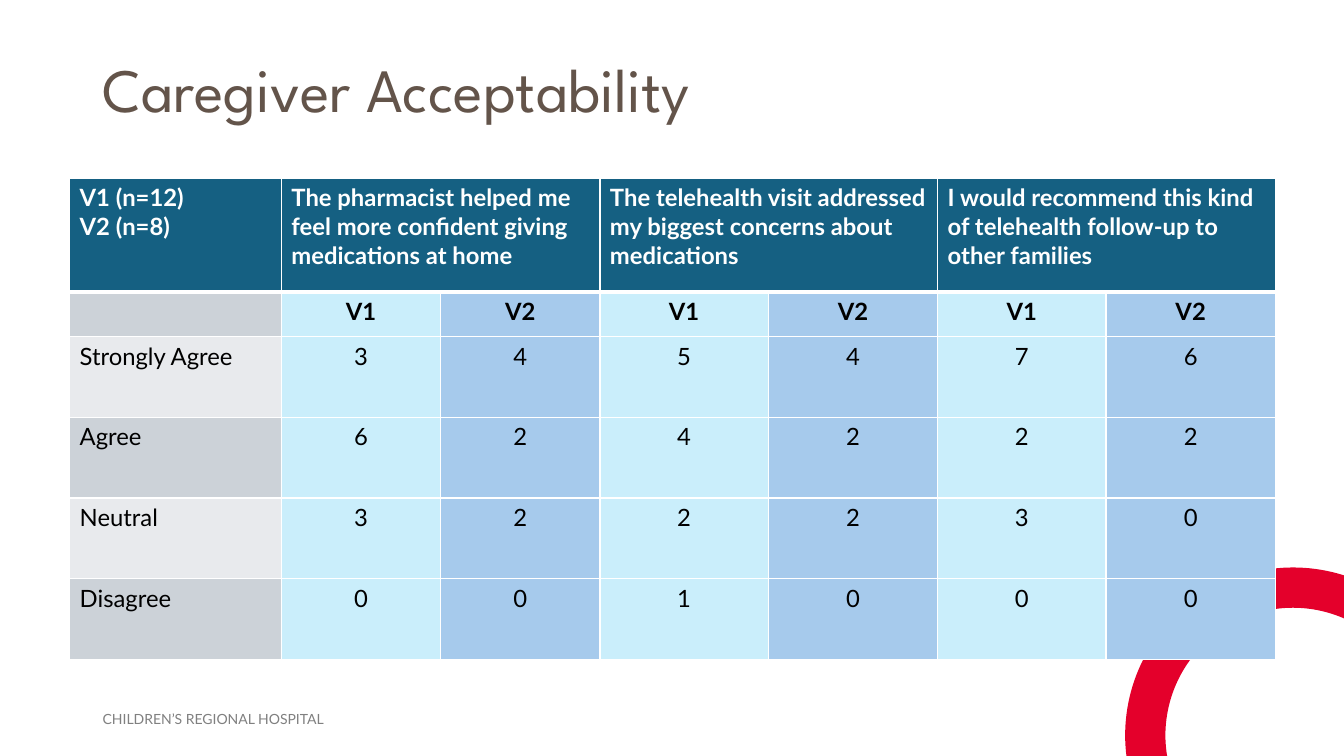
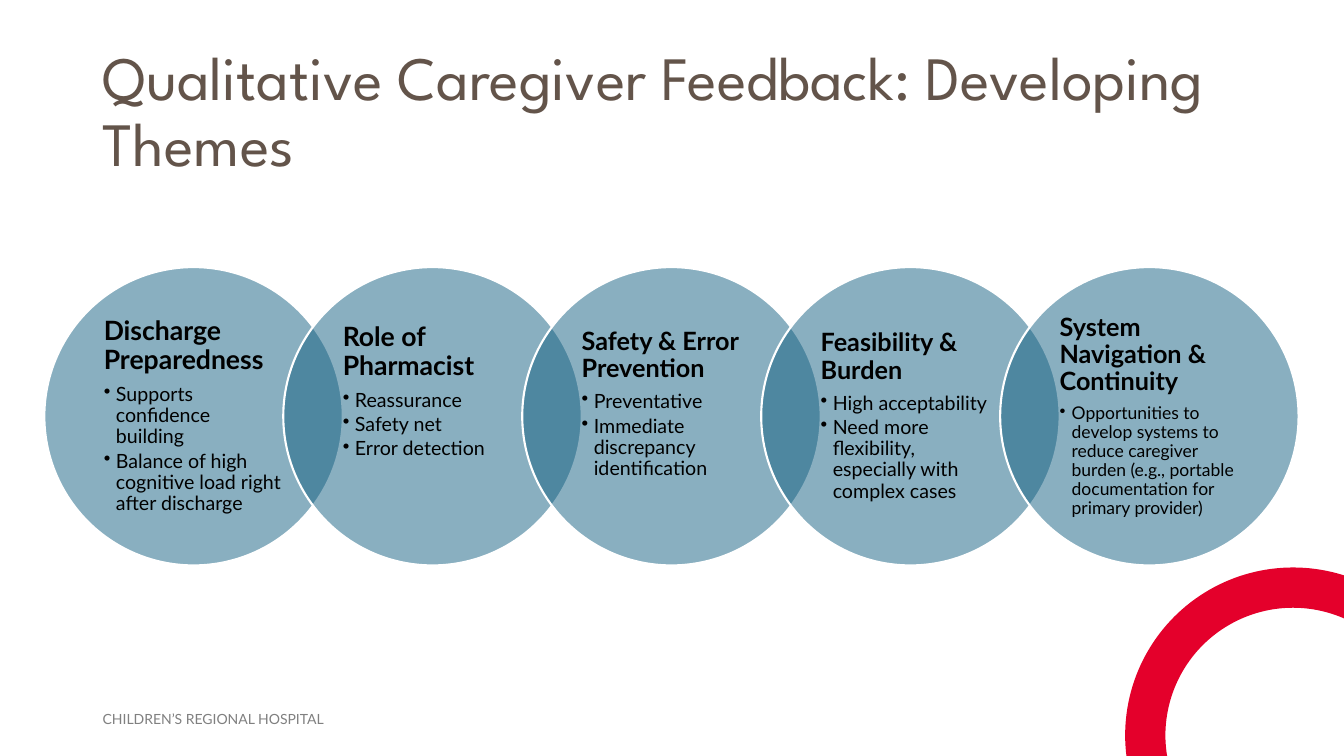
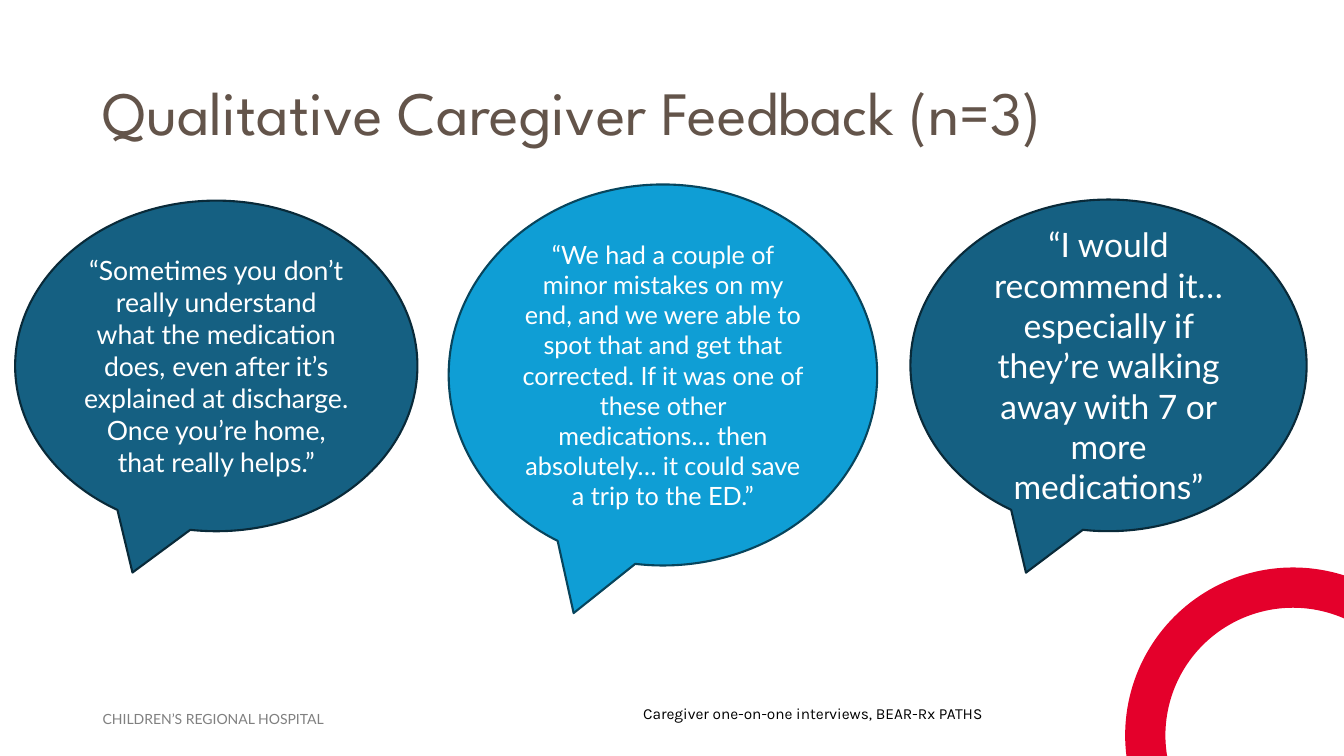
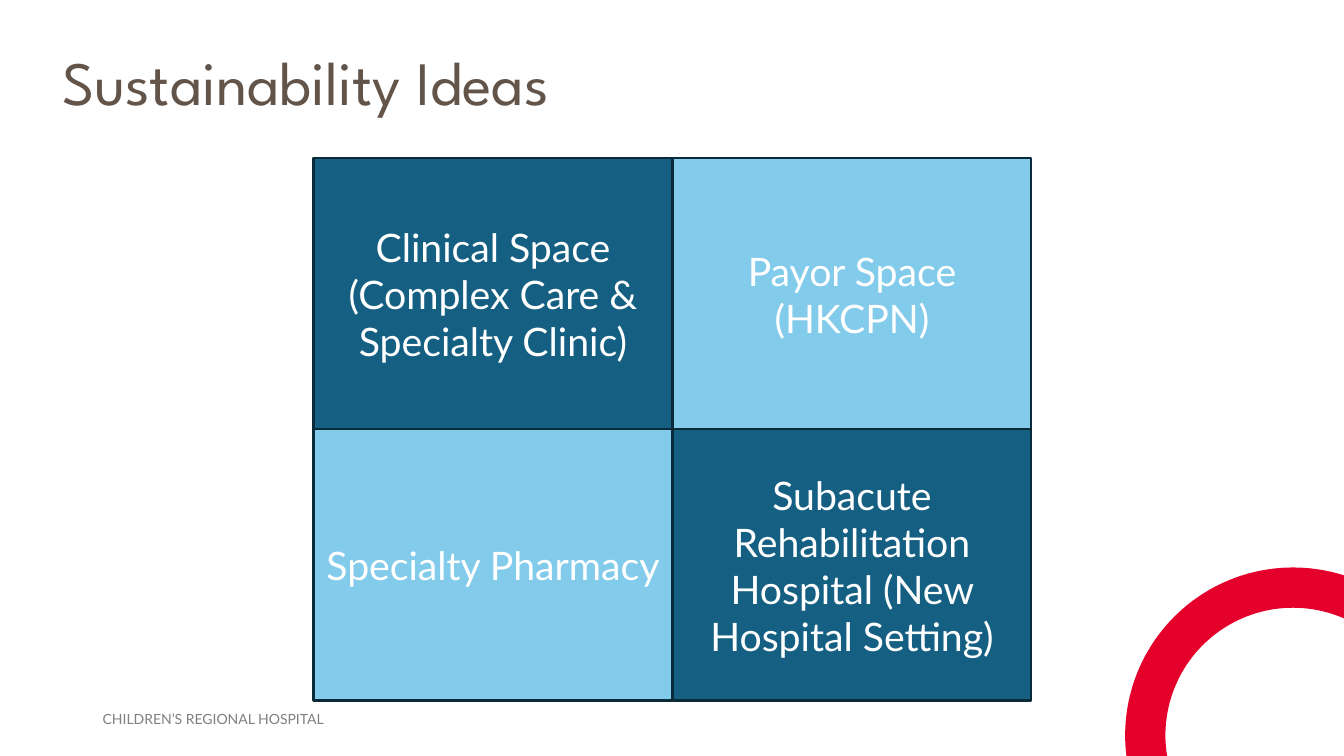
from itertools import product
from lxml.etree import SubElement
from pptx import Presentation
from pptx.dml.color import RGBColor
from pptx.enum.shapes import MSO_SHAPE
from pptx.enum.text import MSO_ANCHOR, PP_ALIGN
from pptx.oxml.ns import qn
from pptx.util import Pt

PX = 9144
WHITE, BLACK = "FFFFFF", "000000"
RED, BROWN, GREY = "E4002B", "63544A", "808080"
TEAL, TEAL_EDGE = "156082", "092A39"
BLUE, BLUE_EDGE, SKY = "0F9ED5", "07455D", "83CBEB"
VISIT_FILLS = ["CAEEFB", "A6CAEC"]
LABEL_FILLS = ["CCD2D8", "E8EAED"]

CENTRED = {"alignment": PP_ALIGN.CENTER}
TIGHT = {"line_spacing": 0.9}
MIDDLE = {"word_wrap": True, "vertical_anchor": MSO_ANCHOR.MIDDLE}


def px(*lengths):
    return [length * PX for length in lengths]


def colour(hex_code):
    return RGBColor.from_string(hex_code)


def apply(target, values):
    for name, value in values.items():
        setattr(target, name, value)


def face(size, hex_code, name="Lato", bold=False):
    return {"size": Pt(size), "name": name, "bold": bold, "color": hex_code}


def add_bullet(paragraph, indent):
    properties = paragraph._p.get_or_add_pPr()
    properties.set("marL", str(indent))
    properties.set("indent", str(-indent))
    SubElement(properties, qn("a:buChar")).set("char", "•")


def write(frame, lines, font, layout=None, bulleted=False, more=False):
    for number, line in enumerate(lines):
        paragraph = frame.add_paragraph() if number or more else frame.paragraphs[0]
        if bulleted:
            add_bullet(paragraph, 12 * PX)
        apply(paragraph, layout or {})
        run = paragraph.add_run()
        run.text = line
        apply(run.font, {key: value for key, value in font.items() if key != "color"})
        run.font.color.rgb = colour(font["color"])


def add_text(slide, box, lines, font, layout=None, frame_values=None):
    frame = slide.shapes.add_textbox(*px(*box)).text_frame
    apply(frame, {"word_wrap": True, **(frame_values or {})})
    write(frame, lines, font, layout)
    return frame


def add_figure(slide, kind, box, fill, edge=None):
    figure = slide.shapes.add_shape(kind, *px(*box))
    figure.shadow.inherit = False
    figure.fill.solid()
    figure.fill.fore_color.rgb = colour(fill)
    if edge:
        figure.line.color.rgb = colour(edge)
        figure.line.width = Pt(1.5)
    else:
        figure.line.fill.background()
    return figure


def add_panel(slide, kind, box, fill, edge, lines, size):
    panel = add_figure(slide, kind, box, fill, edge)
    apply(panel.text_frame, MIDDLE)
    write(panel.text_frame, lines, face(size, WHITE), CENTRED)


def start_slide(deck, title, left, top):
    slide = deck.slides.add_slide(deck.slide_layouts[6])
    ring = add_figure(slide, MSO_SHAPE.DONUT, (1116, 563, 333, 333), RED)
    ring.adjustments[0] = 0.12
    add_text(slide, (92, 700, 420, 27), ["CHILDREN’S REGIONAL HOSPITAL"], face(10, GREY))
    add_text(slide, (left, top, 1150, 145), [title],
             face(44, BROWN, "League Spartan"), TIGHT, MIDDLE)
    return slide


def fill_cell(cell, fill, top=1, bottom=1):
    properties = cell._tc.get_or_add_tcPr()
    for side, width in {"L": 1, "R": 1, "T": top, "B": bottom}.items():
        border = SubElement(properties, qn(f"a:ln{side}"), w=str(Pt(width)))
        paint = SubElement(border, qn("a:solidFill"))
        SubElement(paint, qn("a:srgbClr")).set("val", WHITE)
    cell.fill.solid()
    cell.fill.fore_color.rgb = colour(fill)


def add_survey(slide, box, widths, heights, groups, statements, answers):
    rows = [("", ["V1", "V2"] * len(statements)), *answers]
    survey = slide.shapes.add_table(len(heights), len(widths), *px(*box)).table
    for column, width in zip(survey.columns, px(*widths)):
        column.width = width
    for row, height in zip(survey.rows, px(*heights)):
        row.height = height

    for column in range(len(widths)):
        fill_cell(survey.cell(0, column), TEAL, bottom=3)
    heading = face(17, WHITE, bold=True)
    write(survey.cell(0, 0).text_frame, groups, heading)
    for number, statement in enumerate(statements):
        column = 1 + 2 * number
        survey.cell(0, column).merge(survey.cell(0, column + 1))
        write(survey.cell(0, column).text_frame, [statement], heading)

    for number, (label, values) in enumerate(rows):
        top = 1 if number else 3
        font = face(17, BLACK, bold=number == 0)
        label_cell = survey.cell(number + 1, 0)
        fill_cell(label_cell, LABEL_FILLS[number % 2], top)
        if label:
            write(label_cell.text_frame, [label], font)
        for column, value in enumerate(values):
            cell = survey.cell(number + 1, column + 1)
            fill_cell(cell, VISIT_FILLS[column % 2], top)
            write(cell.text_frame, [str(value)], font, CENTRED)


def add_theme(slide, left, top, heading, heading_size, points, point_size, lift):
    circle = add_figure(slide, MSO_SHAPE.OVAL, (left, top, 296, 296), TEAL, WHITE)
    tint = circle.fill._xPr.find(qn("a:solidFill"))[0]
    SubElement(tint, qn("a:alpha")).set("val", "50000")
    margins = dict(zip(("margin_left", "margin_top", "margin_right", "margin_bottom"),
                       px(16, 3, 16, 3 + lift)))
    frame = add_text(slide, (left + 43, top + 43, 210, 210), [heading],
                     face(heading_size, BLACK, bold=True),
                     {**TIGHT, "space_after": Pt(0.35 * heading_size)},
                     {**MIDDLE, **margins})
    write(frame, points, face(point_size, BLACK),
          {**TIGHT, "space_after": Pt(0.15 * point_size)}, bulleted=True, more=True)


def add_quadrants(slide, box, ideas):
    left, top, width, height = box
    for (row, column), lines in zip(product(range(2), repeat=2), ideas):
        fill = SKY if (row + column) % 2 else TEAL
        add_panel(slide, MSO_SHAPE.RECTANGLE,
                  (left + column * width, top + row * height, width, height),
                  fill, TEAL_EDGE, lines, 28)


def build_acceptability(deck):
    slide = start_slide(deck, "Caregiver Acceptability", 92, 19)
    add_survey(
        slide, (69, 177, 1196, 477),
        [210, 158, 158, 167, 168, 167, 168], [113, 44, 80, 80, 80, 80],
        ["V1 (n=12)", "V2 (n=8)"],
        ["The pharmacist helped me feel more confident giving medications at home",
         "The telehealth visit addressed my biggest concerns about medications",
         "I would recommend this kind of telehealth follow-up to other families"],
        [("Strongly Agree", [3, 4, 5, 4, 7, 6]),
         ("Agree", [6, 2, 4, 2, 2, 2]),
         ("Neutral", [3, 2, 2, 2, 3, 0]),
         ("Disagree", [0, 0, 1, 0, 0, 0])])


def build_themes(deck):
    slide = start_slide(deck, "Qualitative Caregiver Feedback: Developing Themes", 92, 40)
    themes = [
        ("Discharge Preparedness", 19,
         ["Supports confidence building",
          "Balance of high cognitive load right after discharge"], 14, 0),
        ("Role of Pharmacist", 19,
         ["Reassurance", "Safety net", "Error detection"], 14, 48),
        ("Safety & Error Prevention", 18,
         ["Preventative", "Immediate discrepancy identification"], 14, 24),
        ("Feasibility & Burden", 18,
         ["High acceptability",
          "Need more flexibility, especially with complex cases"], 14, 0),
        ("System Navigation & Continuity", 18,
         ["Opportunities to develop systems to reduce caregiver burden "
          "(e.g., portable documentation for primary provider)"], 12.5, 0),
    ]
    for number, theme in enumerate(themes):
        add_theme(slide, 44 + 237 * number, 265, *theme)


def build_quotes(deck):
    slide = start_slide(deck, "Qualitative Caregiver Feedback (n=3)", 92, 42)
    quotes = [
        ((15, 199, 399, 328), TEAL, TEAL_EDGE,
         ["“Sometimes you don’t really understand what the medication does, even after "
          "it’s explained at discharge. Once you’re home, that really helps.”"], 19),
        ((445, 183, 425, 378), BLUE, BLUE_EDGE,
         ["“We had a couple of minor mistakes on my end, and we were able to spot that "
          "and get that corrected. If it was one of these other medications… then "
          "absolutely… it could save a trip to the ED.”"], 18),
        ((903, 198, 393, 329), TEAL, TEAL_EDGE,
         ["“I would recommend it… especially if they’re walking away with 7 or more "
          "medications”"], 24),
    ]
    for quote in quotes:
        add_panel(slide, MSO_SHAPE.OVAL_CALLOUT, *quote)
    add_text(slide, (628, 694, 424, 29),
             ["Caregiver one-on-one interviews, BEAR-Rx PATHS"], face(11, BLACK, "Karla"))


def build_sustainability(deck):
    slide = start_slide(deck, "Sustainability Ideas", 52, 12)
    add_quadrants(slide, (311, 157, 356, 269), [
        ["Clinical Space", "(Complex Care & Specialty Clinic)"],
        ["Payor Space (HKCPN)"],
        ["Specialty Pharmacy"],
        ["Subacute Rehabilitation Hospital (New Hospital Setting)"]])


def main():
    deck = Presentation()
    deck.slide_width, deck.slide_height = px(1333, 750)
    for build in (build_acceptability, build_themes, build_quotes, build_sustainability):
        build(deck)
    deck.save("out.pptx")


if __name__ == "__main__":
    main()
